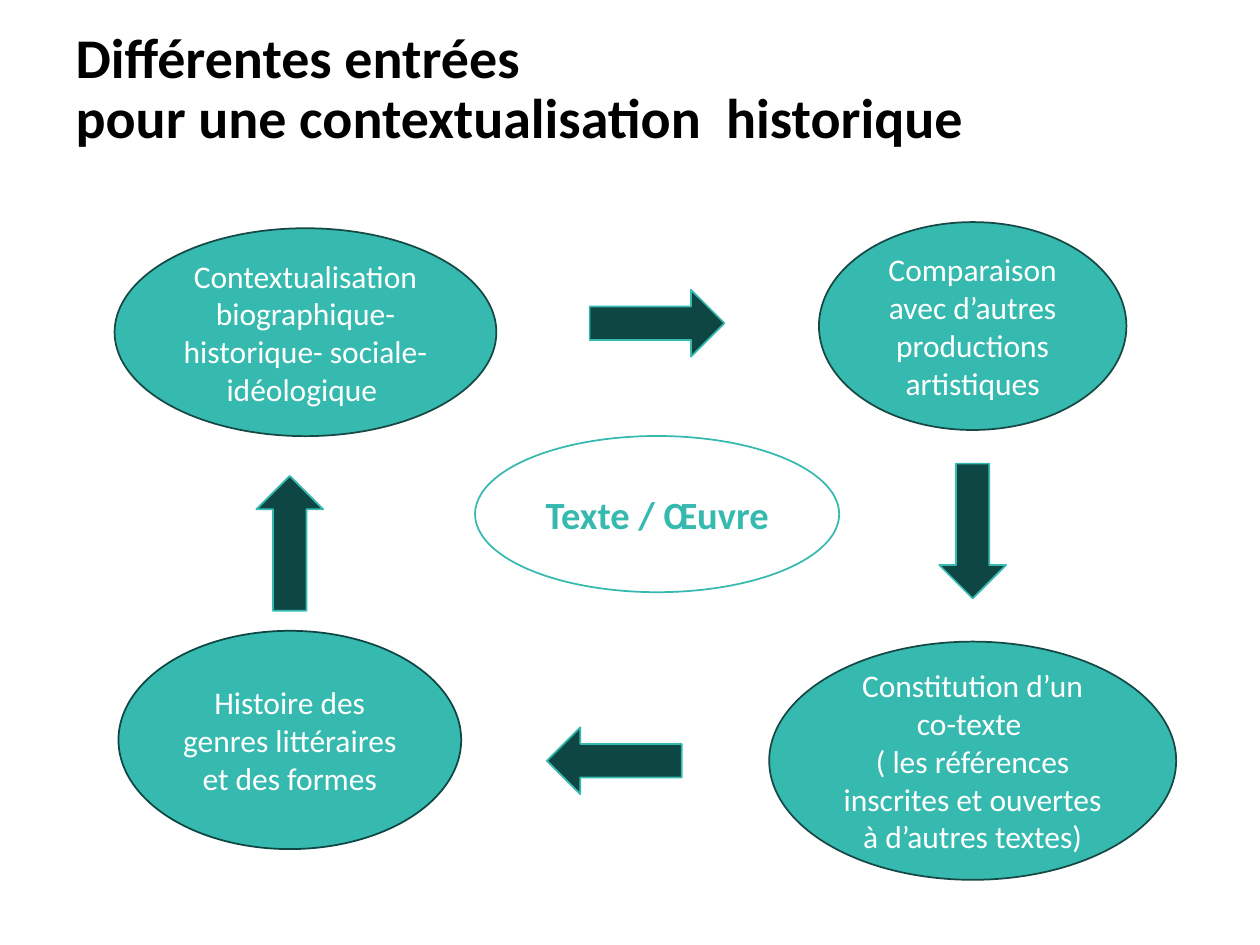
"""Build a slide showing a cycle of four historical approaches around a text."""
import pptx
import pptx.dml.color
import pptx.enum.shapes
import pptx.enum.text
import pptx.util

TEAL = pptx.dml.color.RGBColor(0x36, 0xBA, 0xB0)
DARK = pptx.dml.color.RGBColor(0x0D, 0x46, 0x43)
EDGE = pptx.dml.color.RGBColor(0x16, 0x49, 0x45)
WHITE = pptx.dml.color.RGBColor(0xFF, 0xFF, 0xFF)
BLACK = pptx.dml.color.RGBColor(0, 0, 0)
KIND = pptx.enum.shapes.MSO_SHAPE
ALIGN = pptx.enum.text.PP_ALIGN

deck = pptx.Presentation()
deck.slide_width = pptx.util.Inches(10)
deck.slide_height = pptx.util.Inches(7.5)
column = deck.slide_width / 100
row = deck.slide_height / 100
slide = deck.slides.add_slide(deck.slide_layouts[5])


def write(owner, wording, color, align, **font_format):
    frame = owner.text_frame
    frame.word_wrap = True
    frame.vertical_anchor = pptx.enum.text.MSO_ANCHOR.MIDDLE
    frame.text = wording
    paragraph = frame.paragraphs[0]
    paragraph.alignment = align
    for run in paragraph.runs:
        run.font.color.rgb = color
        for attribute, value in {"name": "Calibri", **font_format}.items():
            setattr(run.font, attribute, value)


def draw(kind, center_x, center_y, width, height, fill, edge):
    figure = slide.shapes.add_shape(
        kind,
        round((center_x - width / 2) * column),
        round((center_y - height / 2) * row),
        round(width * column),
        round(height * row),
    )
    figure.shadow.inherit = False
    if fill is None:
        figure.fill.background()
    else:
        figure.fill.solid()
        figure.fill.fore_color.rgb = fill
    figure.line.color.rgb = edge
    figure.line.width = pptx.util.Pt(1)
    return figure


heading = slide.shapes.title
heading_place = {
    "left": 5 * column,
    "top": 1.2 * row,
    "width": 90 * column,
    "height": 16.67 * row,
}
for attribute, length in heading_place.items():
    setattr(heading, attribute, round(length))
write(
    heading,
    "Différentes entrées \vpour une contextualisation  historique",
    BLACK, ALIGN.LEFT, size=pptx.util.Pt(32), bold=True,
)
heading.text_frame.paragraphs[0].line_spacing = 0.9

approaches = [
    ("Contextualisation biographique-historique- sociale-idéologique ",
     24.25, 35.15, 30.3, 22, EDGE),
    ("Comparaison avec d’autres productions artistiques",
     77.2, 34.5, 24.4, 22, EDGE),
    ("Constitution d’un co-texte \v( les références inscrites et ouvertes à d’autres textes)",
     77.2, 80.5, 32.3, 25.2, EDGE),
    ("Histoire des genres littéraires et des formes",
     23, 78.3, 27.2, 23.1, DARK),
]
for wording, center_x, center_y, width, height, edge in approaches:
    approach = draw(KIND.OVAL, center_x, center_y, width, height, TEAL, edge)
    write(approach, wording, WHITE, ALIGN.CENTER, size=pptx.util.Pt(18))

across = (10.7, 7.07)
upright = (5.3, 14.27)
cycle_steps = [
    (KIND.RIGHT_ARROW, 52.15, 34.2, across),
    (KIND.DOWN_ARROW, 77.2, 56.2, upright),
    (KIND.LEFT_ARROW, 48.75, 80.5, across),
    (KIND.UP_ARROW, 23, 57.5, upright),
]
for kind, center_x, center_y, extent in cycle_steps:
    draw(kind, center_x, center_y, *extent, DARK, TEAL)

work = draw(KIND.OVAL, 52.15, 54.4, 28.9, 16.53, None, TEAL)
write(work, "Texte / Œuvre", TEAL, ALIGN.CENTER, size=pptx.util.Pt(22), bold=True)

deck.save("out.pptx")
